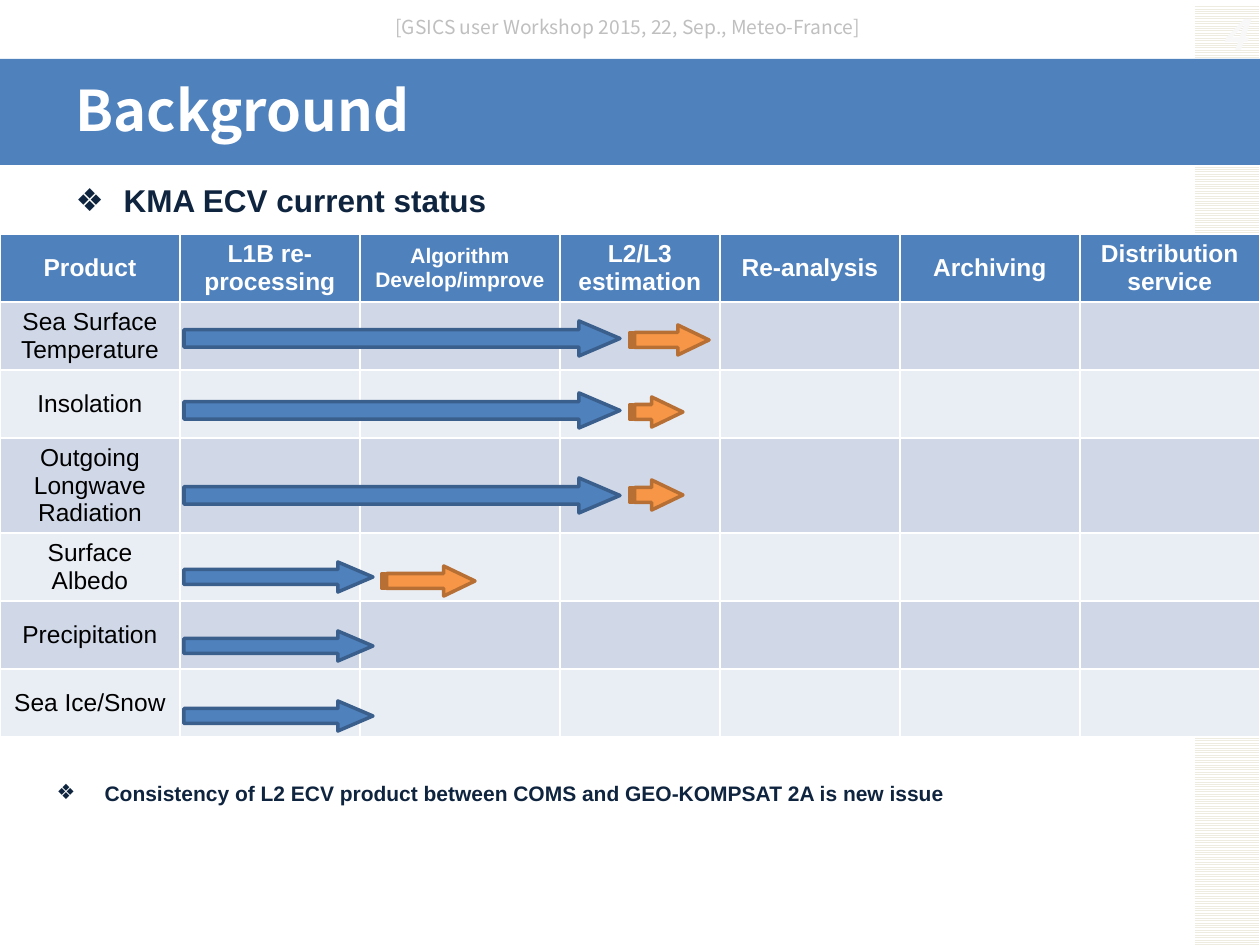
from lxml.etree import SubElement
from pptx import Presentation
from pptx.dml.color import RGBColor
from pptx.enum.dml import MSO_PATTERN as Pattern
from pptx.enum.shapes import MSO_SHAPE as Shape
from pptx.enum.text import MSO_ANCHOR as Anchor, MSO_AUTO_SIZE as AutoSize, PP_ALIGN as Align
from pptx.oxml.ns import qn
from pptx.util import Emu, Pt

PX = 914400 // 126
WHITE = RGBColor(0xFF, 0xFF, 0xFF)
BLACK = RGBColor(0x00, 0x00, 0x00)
NAVY = RGBColor(0x0F, 0x24, 0x3E)
BLUE = RGBColor(0x4F, 0x81, 0xBD)
BLUE_EDGE = RGBColor(0x3A, 0x5F, 0x8C)
ORANGE = RGBColor(0xF7, 0x96, 0x46)
ORANGE_EDGE = RGBColor(0xB7, 0x6F, 0x34)
BAND_DARK = RGBColor(0xD0, 0xD8, 0xE8)
BAND_LIGHT = RGBColor(0xE9, 0xED, 0xF4)
CREAM = RGBColor(0xEE, 0xEC, 0xE1)
GREY = RGBColor(0xBF, 0xBF, 0xBF)
PALE = RGBColor(0xF8, 0xF8, 0xF8)
SANS, HEADING = "Arial", "Noto Sans CJK KR"

HEADERS = ["Product", "L1B re-processing", "Algorithm Develop/improve",
           "L2/L3 estimation", "Re-analysis", "Archiving", "Distribution service"]
COLUMN_WIDTHS = [180, 180, 200, 160, 180, 180, 180]
ROW_HEIGHT = 68
PRODUCTS = ["Sea Surface Temperature", "Insolation", "Outgoing Longwave Radiation",
            "Surface Albedo", "Precipitation", "Sea Ice/Snow"]

# Finished work: top, width, height
DONE = [(321, 436, 35), (393, 436, 35), (478, 436, 35),
        (562, 189, 30), (631, 189, 30), (701, 189, 30)]
# Ongoing work: left, top, width
ONGOING = [(630, 325, 79), (630, 397, 53), (630, 480, 53), (382, 566, 93)]


def px(*lengths):
    return [Emu(length * PX) for length in lengths]


class SlideBuilder:
    def __init__(self, slide):
        self.slide = slide

    def set_text(self, paragraph, text, align=Align.LEFT, **style):
        paragraph.text = text
        paragraph.alignment = align
        font = paragraph.runs[0].font
        font.color.rgb = style.pop("color")
        for name, value in style.items():
            setattr(font, name, value)

    def block(self, kind, box, fill, edge=None, adjustments=()):
        shape = self.slide.shapes.add_shape(kind, *px(*box))
        shape.shadow.inherit = False
        shape.fill.solid()
        shape.fill.fore_color.rgb = fill
        if edge is None:
            shape.line.fill.background()
        else:
            shape.line.color.rgb = edge
            shape.line.width = Pt(2)
        for index, value in enumerate(adjustments):
            shape.adjustments[index] = value
        return shape

    def hatched_strip(self, box):
        fill = self.block(Shape.RECTANGLE, box, WHITE).fill
        fill.patterned()
        fill.pattern = Pattern.LIGHT_HORIZONTAL
        fill.fore_color.rgb = CREAM
        fill.back_color.rgb = WHITE

    def label(self, box, text, anchor=Anchor.TOP, wrap=True, **style):
        frame = self.slide.shapes.add_textbox(*px(*box)).text_frame
        frame.word_wrap = wrap
        frame.vertical_anchor = anchor
        self.set_text(frame.paragraphs[0], text, **style)
        return frame.paragraphs[0]

    def placeholder(self, index, box, text, anchor=Anchor.TOP, bullet=None, **style):
        """Fill a template placeholder and bring it to the front."""
        shape = self.slide.placeholders[index]
        shape.element.getparent().append(shape.element)
        shape.left, shape.top, shape.width, shape.height = px(*box)
        frame = shape.text_frame
        frame.auto_size = AutoSize.NONE
        frame.vertical_anchor = anchor
        paragraph = frame.paragraphs[0]
        paragraph.space_before = Pt(0)
        if bullet:
            properties = paragraph._p.get_or_add_pPr()
            indent = 48 * PX
            properties.set("marL", str(indent))
            properties.set("indent", str(-indent))
            SubElement(properties, qn("a:buChar")).set("char", bullet)
        self.set_text(paragraph, text, **style)
        return paragraph

    def table(self, left, top, headers, products):
        size = px(left, top, sum(COLUMN_WIDTHS), ROW_HEIGHT * (len(products) + 1))
        table = self.slide.shapes.add_table(len(products) + 1, len(headers), *size).table
        for column, width in zip(table.columns, COLUMN_WIDTHS):
            column.width = Emu(width * PX)
        for row_index, row in enumerate(table.rows):
            row.height = Emu(ROW_HEIGHT * PX)
            is_header = row_index == 0
            band = BLUE if is_header else BAND_DARK if row_index % 2 else BAND_LIGHT
            texts = headers if is_header else [products[row_index - 1]]
            for cell in row.cells:
                cell.fill.solid()
                cell.fill.fore_color.rgb = band
                cell.vertical_anchor = Anchor.MIDDLE
            for cell, text in zip(row.cells, texts):
                size = Pt(12 if text.startswith("Algorithm") else 14)
                self.set_text(cell.text_frame.paragraphs[0], text, Align.CENTER, name=SANS,
                              size=size, bold=is_header, color=WHITE if is_header else BLACK)


def main():
    presentation = Presentation()
    presentation.slide_width, presentation.slide_height = px(1260, 945)
    two_content = presentation.slide_layouts[3]
    builder = SlideBuilder(presentation.slides.add_slide(two_content))

    builder.hatched_strip((1195, 4, 64, 941))
    builder.block(Shape.RECTANGLE, (0, 59, 1260, 106), BLUE)
    number = builder.label((965, 9, 294, 50), "4", Anchor.MIDDLE, align=Align.RIGHT,
                           name=HEADING, size=Pt(24), bold=True, italic=True, color=PALE)
    number.runs[0]._r.get_or_add_rPr().set("spc", "150")
    builder.label((383, 9, 494, 36), "[GSICS user Workshop 2015, 22, Sep., Meteo-France]",
                  wrap=False, name=HEADING, size=Pt(11), color=GREY)

    builder.placeholder(0, (63, 45, 1134, 129), "Background", Anchor.MIDDLE,
                        name=HEADING, size=Pt(32), bold=True, color=WHITE)
    body_style = dict(bullet="❖", name=SANS, bold=True, color=NAVY)
    builder.placeholder(1, (63, 175, 1074, 362), "KMA ECV current status",
                        size=Pt(18), **body_style)

    builder.table(0, 234, HEADERS, PRODUCTS)
    for top, width, height in DONE:
        builder.block(Shape.RIGHT_ARROW, (184, top, width, height),
                      BLUE, BLUE_EDGE, (0.5, 1.17))
    for left, top, width in ONGOING:
        builder.block(Shape.STRIPED_RIGHT_ARROW, (left, top, width, 30),
                      ORANGE, ORANGE_EDGE, (0.5, 1.04))

    issue = builder.placeholder(
        2, (44, 764, 1196, 100),
        "Consistency of L2 ECV product between COMS and GEO-KOMPSAT 2A is new issue",
        size=Pt(12), **body_style)
    issue.line_spacing = Pt(20)

    presentation.save("out.pptx")


if __name__ == "__main__":
    main()
